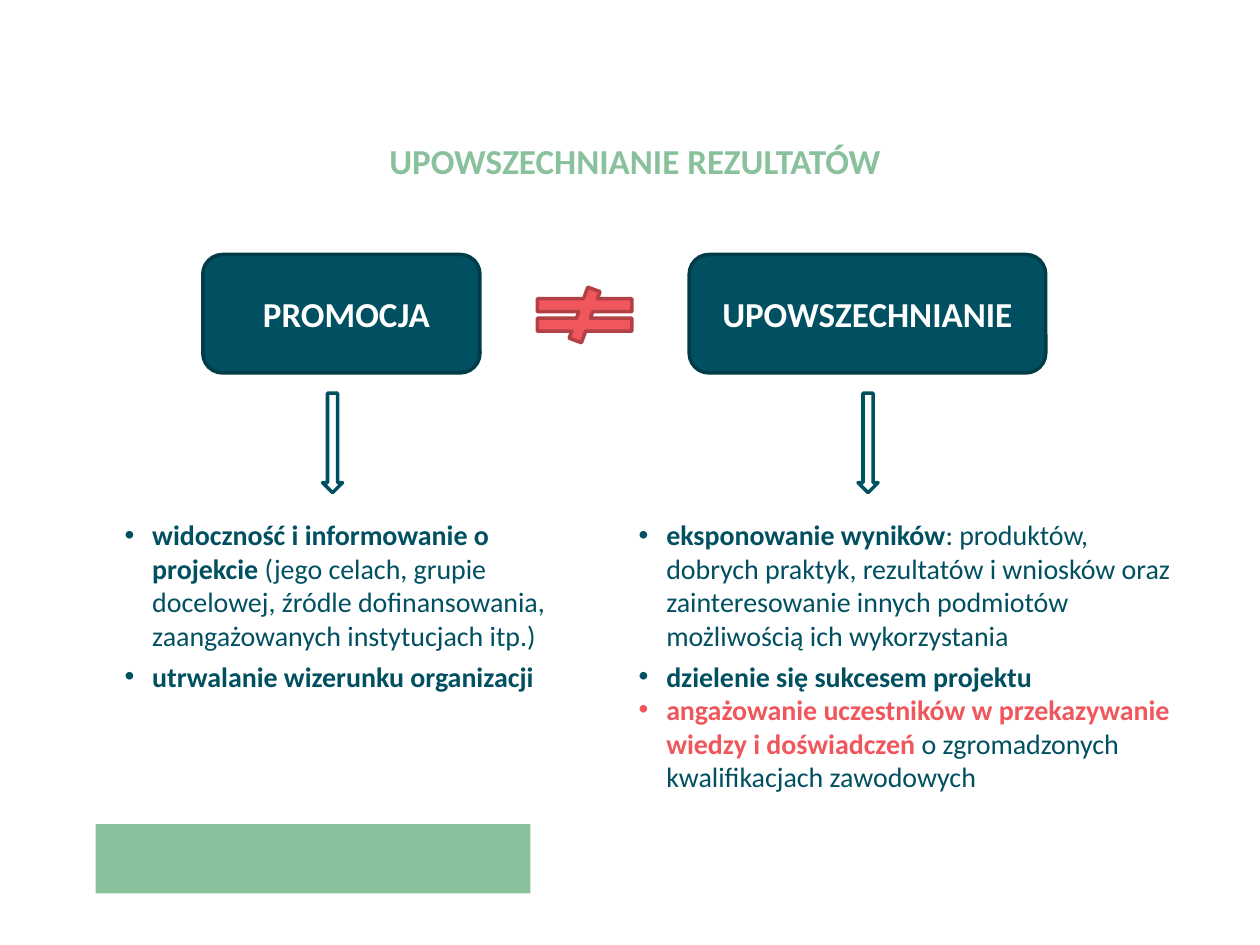
from dataclasses import dataclass

from lxml.etree import SubElement
from pptx import Presentation
from pptx.dml.color import RGBColor
from pptx.enum.shapes import MSO_SHAPE
from pptx.enum.text import MSO_ANCHOR, PP_ALIGN
from pptx.oxml.ns import qn
from pptx.util import Emu, Inches, Pt

FONT = "Calibri"
GREEN = RGBColor(0x8A, 0xC1, 0x9D)
TEAL = RGBColor(0x00, 0x50, 0x61)
DARK_TEAL = RGBColor(0x00, 0x3B, 0x48)
CORAL = RGBColor(0xF0, 0x57, 0x5C)
DARK_CORAL = RGBColor(0xB2, 0x40, 0x44)
WHITE = RGBColor(0xFF, 0xFF, 0xFF)

# The slide is a grid of 100 columns by 75 rows
COLUMNS, ROWS = 100, 75
BOX_TOP, BOX_HEIGHT = 20.2, 9.4
ARROW_TOP, ARROW_WIDTH, ARROW_HEIGHT = 31.2, 1.6, 7.9
LIST_TOP = 40.6


@dataclass(frozen=True)
class Area:
    left: float
    top: float
    width: float
    height: float


@dataclass(frozen=True)
class Phrase:
    text: str
    bold: bool = True
    color: RGBColor = TEAL


@dataclass(frozen=True)
class Point:
    phrases: tuple[Phrase, ...]
    space_after: float = 0


@dataclass(frozen=True)
class Concept:
    heading: str
    box_left: float
    box_width: float
    heading_shift: float
    arrow_left: float
    list_left: float
    list_width: float
    list_height: float
    points: tuple[Point, ...]


CONCEPTS = (
    Concept("PROMOCJA", 16.1, 22, 0.8, 25.6, 8, 40.2, 18.1, (
        Point((Phrase("widoczność i informowanie o projekcie "),
               Phrase("(jego celach, grupie docelowej, źródle dofinansowania, "
                      "zaangażowanych instytucjach itp.)", False)), 4),
        Point((Phrase("utrwalanie wizerunku organizacji"),)),
    )),
    Concept("UPOWSZECHNIANIE", 54.7, 28.3, 0, 68.1, 48.8, 45.3, 23.1, (
        Point((Phrase("eksponowanie wyników"),
               Phrase(": produktów, dobrych praktyk, rezultatów i wniosków oraz "
                      "zainteresowanie innych podmiotów możliwością ich "
                      "wykorzystania", False)), 4),
        Point((Phrase("dzielenie się sukcesem projektu"),)),
        Point((Phrase("angażowanie uczestników w przekazywanie wiedzy "
                      "i doświadczeń ", color=CORAL),
               Phrase("o zgromadzonych kwalifikacjach zawodowych", False))),
    )),
)

deck = Presentation()
deck.slide_width, deck.slide_height = Inches(10), Inches(7.5)
slide = deck.slides.add_slide(deck.slide_layouts[6])


def place(area: Area) -> tuple[Emu, Emu, Emu, Emu]:
    column, row = deck.slide_width / COLUMNS, deck.slide_height / ROWS
    return (Emu(round(area.left * column)), Emu(round(area.top * row)),
            Emu(round(area.width * column)), Emu(round(area.height * row)))


def style_run(run, size: float, color: RGBColor, bold: bool = True) -> None:
    run.font.name, run.font.size, run.font.bold = FONT, Pt(size), bold
    run.font.color.rgb = color


def draw_shape(kind: MSO_SHAPE, area: Area, fill: RGBColor,
               outline: RGBColor | None = None):
    shape = slide.shapes.add_shape(kind, *place(area))
    shape.shadow.inherit = False
    shape.fill.solid()
    shape.fill.fore_color.rgb = fill
    if outline is None:
        shape.line.fill.background()
    else:
        shape.line.color.rgb, shape.line.width = outline, Pt(2)
    return shape


def write_heading(shape, text: str, color: RGBColor) -> None:
    frame = shape.text_frame
    frame.word_wrap, frame.vertical_anchor = True, MSO_ANCHOR.MIDDLE
    frame.text = text
    frame.paragraphs[0].alignment = PP_ALIGN.CENTER
    style_run(frame.paragraphs[0].runs[0], 20, color)


def add_bullet(paragraph) -> None:
    properties = paragraph._p.get_or_add_pPr()
    properties.set("marL", str(Inches(0.31)))
    properties.set("indent", str(Inches(-0.22)))
    SubElement(properties, qn("a:buFont")).set("typeface", "Arial")
    SubElement(properties, qn("a:buChar")).set("char", "•")


def draw_points(area: Area, points: tuple[Point, ...]) -> None:
    frame = slide.shapes.add_textbox(*place(area)).text_frame
    frame.word_wrap = True
    for index, point in enumerate(points):
        paragraph = frame.add_paragraph() if index else frame.paragraphs[0]
        add_bullet(paragraph)
        paragraph.space_after = Pt(point.space_after)
        for phrase in point.phrases:
            run = paragraph.add_run()
            run.text = phrase.text
            style_run(run, 16, phrase.color, phrase.bold)


def draw_concept(concept: Concept) -> None:
    box = draw_shape(MSO_SHAPE.ROUNDED_RECTANGLE,
                     Area(concept.box_left, BOX_TOP, concept.box_width, BOX_HEIGHT),
                     TEAL, DARK_TEAL)
    write_heading(box, concept.heading, WHITE)
    box.text_frame.margin_left = Inches(0.1 + concept.heading_shift / 10)
    draw_shape(MSO_SHAPE.DOWN_ARROW,
               Area(concept.arrow_left, ARROW_TOP, ARROW_WIDTH, ARROW_HEIGHT),
               WHITE, TEAL)
    draw_points(Area(concept.list_left, LIST_TOP, concept.list_width,
                     concept.list_height), concept.points)


# Footer band and title
draw_shape(MSO_SHAPE.RECTANGLE, Area(7.6, 65.4, 34.5, 5.5), GREEN)
title = slide.shapes.add_textbox(*place(Area(7.5, 9.2, 85.8, 7.1)))
write_heading(title, "UPOWSZECHNIANIE REZULTATÓW", GREEN)

# Two concepts, told apart by the sign between them
for concept in CONCEPTS:
    draw_concept(concept)
draw_shape(MSO_SHAPE.MATH_NOT_EQUAL, Area(41.3, 22.8, 10.2, 4.4), CORAL, DARK_CORAL)

deck.save("out.pptx")
